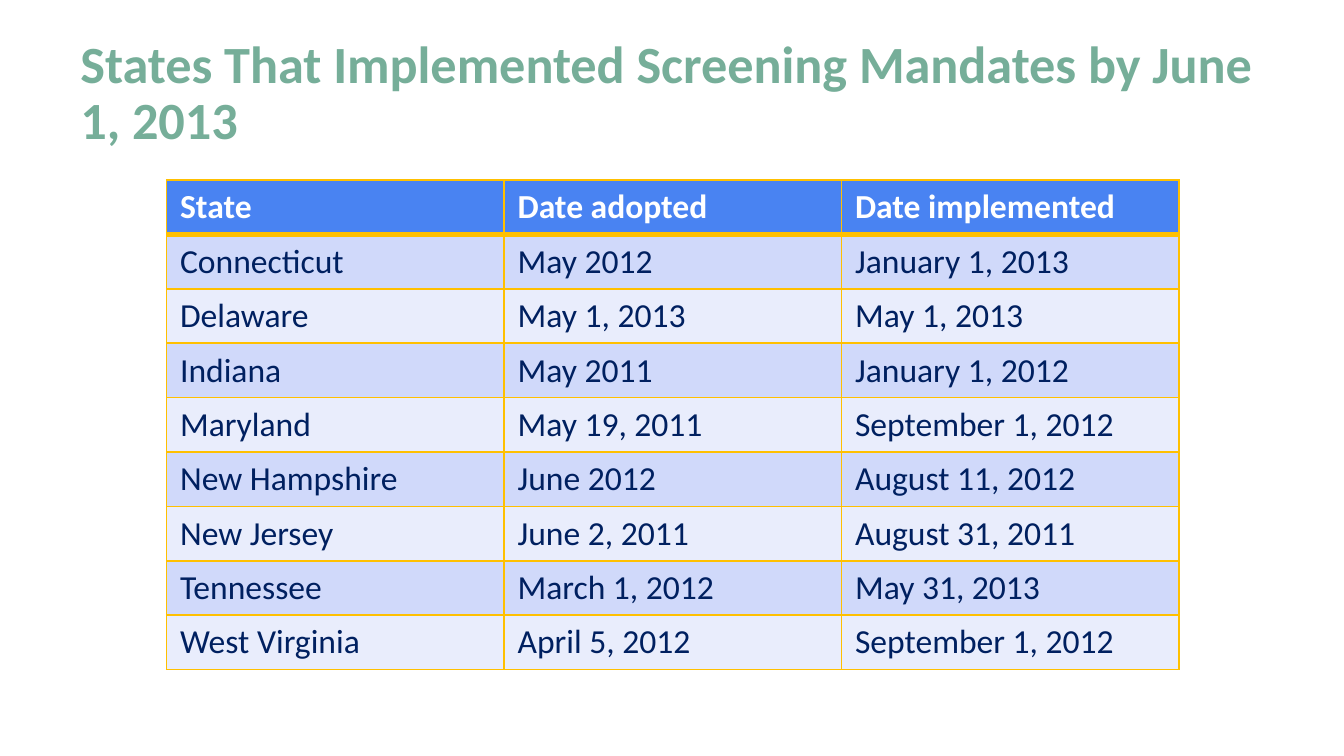
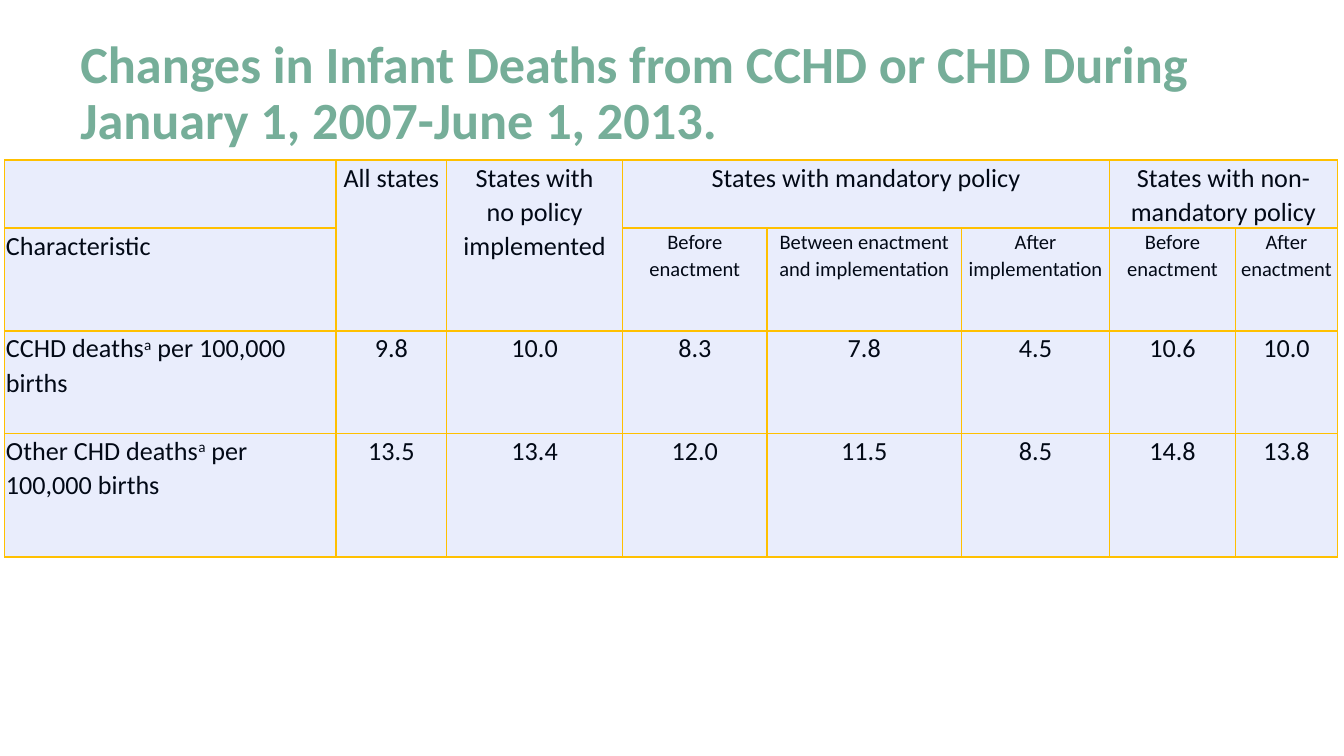
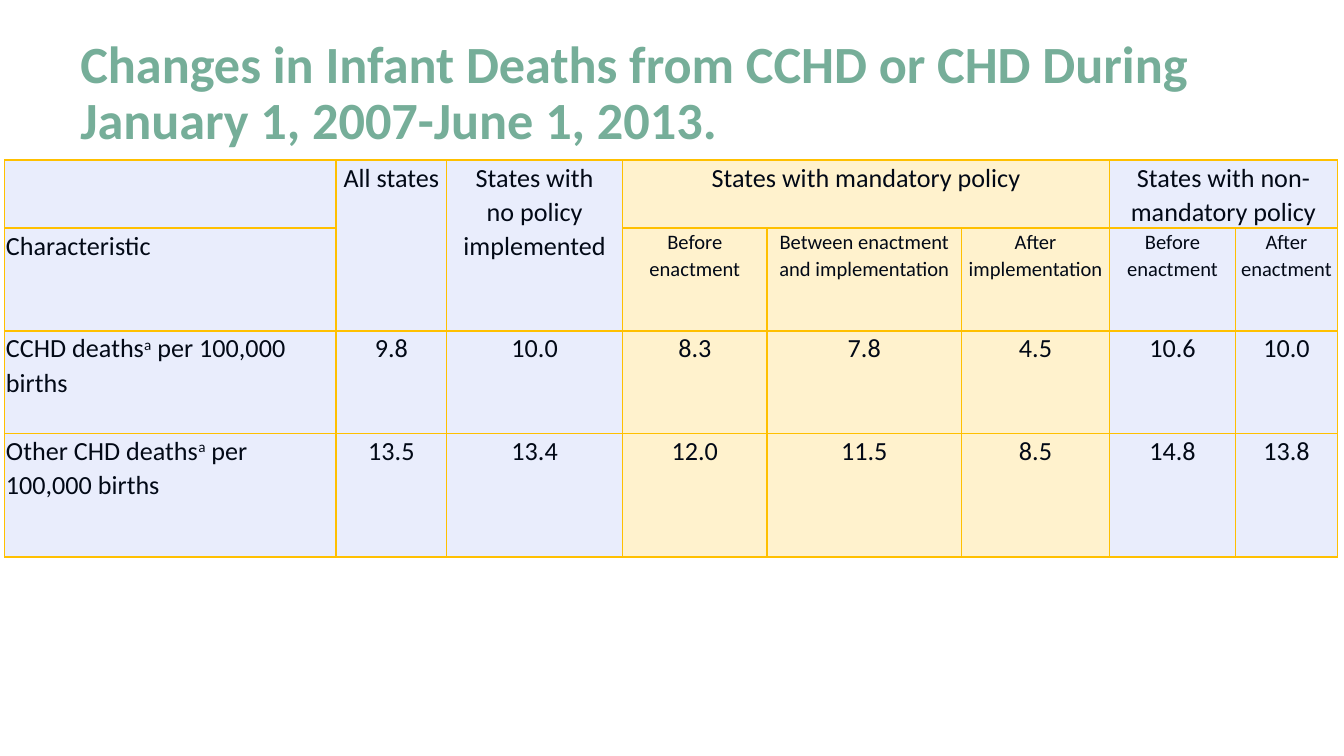
from lxml import etree
from pptx import Presentation
from pptx.dml.color import RGBColor
from pptx.enum.text import MSO_ANCHOR, PP_ALIGN
from pptx.oxml.ns import qn
from pptx.util import Pt

BOTTOM = MSO_ANCHOR.BOTTOM
LEFT, CENTER = PP_ALIGN.LEFT, PP_ALIGN.CENTER

GREEN = RGBColor(0x76, 0xAE, 0x99)
GOLD = RGBColor(0xFF, 0xC0, 0x00)
BLUE = RGBColor(0x49, 0x83, 0xF2)
MID = RGBColor(0xD0, 0xD9, 0xFA)
PALE = RGBColor(0xE9, 0xED, 0xFC)
CREAM = RGBColor(0xFF, 0xE6, 0x99)
NAVY = RGBColor(0x00, 0x20, 0x60)
INK = RGBColor(0x02, 0x09, 0x16)
WHITE = RGBColor(0xFF, 0xFF, 0xFF)

STATES = [
    ("State", "Date adopted", "Date implemented"),
    ("Connecticut", "May 2012", "January 1, 2013"),
    ("Delaware", "May 1, 2013", "May 1, 2013"),
    ("Indiana", "May 2011", "January 1, 2012"),
    ("Maryland", "May 19, 2011", "September 1, 2012"),
    ("New Hampshire", "June 2012", "August 11, 2012"),
    ("New Jersey", "June 2, 2011", "August 31, 2011"),
    ("Tennessee", "March 1, 2012", "May 31, 2013"),
    ("West Virginia", "April 5, 2012", "September 1, 2012"),
]

DEATHS = [
    ("", "All states", "States with\nno policy implemented",
     "States with mandatory policy", "", "",
     "States with non-mandatory policy", ""),
    ("Characteristic", "", "", "Before enactment",
     "Between enactment and implementation", "After implementation",
     "Before enactment", "After enactment"),
    ("CCHD deaths^a^ per 100,000 births",
     "9.8", "10.0", "8.3", "7.8", "4.5", "10.6", "10.0"),
    ("Other CHD deaths^a^ per 100,000 births",
     "13.5", "13.4", "12.0", "11.5", "8.5", "14.8", "13.8"),
]
SPANS = [((0, 1), (1, 1)), ((0, 2), (1, 2)), ((0, 3), (0, 5)), ((0, 6), (0, 7))]
WIDTHS = [177.6, 59.2, 94.3, 77.4, 104.2, 79.3, 67.5, 54.6]
HEIGHTS = [36.5, 55, 55, 66]
POLICY = range(3, 6)


class Deck:
    font = "Calibri"

    def __init__(self):
        self.prs = Presentation()
        self.prs.slide_width, self.prs.slide_height = Pt(720), Pt(405)

    def start(self, title):
        """Add a slide with its title."""
        self.slide = self.prs.slides.add_slide(self.prs.slide_layouts[6])
        box = self.slide.shapes.add_textbox(Pt(36), Pt(16.5), Pt(648), Pt(67.5))
        frame = box.text_frame
        frame.word_wrap = True
        frame.vertical_anchor = BOTTOM
        line = frame.paragraphs[0]
        self.put(line, title, 28, GREEN, True)
        line.line_spacing = Pt(30)

    def put(self, line, text, size, color, bold=False):
        """Fill a paragraph; text between carets is raised."""
        for i, part in enumerate(text.split("^")):
            run = line.add_run()
            run.text = part
            if i % 2:
                run._r.get_or_add_rPr().set("baseline", "30000")
        font = line.font
        font.name, font.size, font.bold = self.font, Pt(size), bold
        font.color.rgb = color

    def grid(self, left, top, widths, heights):
        table = self.slide.shapes.add_table(
            len(heights), len(widths), Pt(left), Pt(top),
            Pt(sum(widths)), Pt(sum(heights))).table
        for col, width in zip(table.columns, widths):
            col.width = Pt(width)
        for row, height in zip(table.rows, heights):
            row.height = Pt(height)
        table.horz_banding = False
        return table

    def paint(self, cell, color, alpha=None, **edges):
        """Set borders (1 pt unless given by side letter) and fill."""
        props = cell._tc.get_or_add_tcPr()
        for side in "LRTB":
            line = etree.SubElement(props, qn("a:ln" + side),
                                    w=str(Pt(edges.get(side, 1))))
            fill = etree.SubElement(line, qn("a:solidFill"))
            etree.SubElement(fill, qn("a:srgbClr"), val=str(GOLD))
        cell.fill.solid()
        cell.fill.fore_color.rgb = color
        if alpha:
            tint = props.find(qn("a:solidFill")).find(qn("a:srgbClr"))
            etree.SubElement(tint, qn("a:alpha"), val=str(alpha * 1000))

    def dates(self):
        table = self.grid(89.3, 96.5, [180.8] * 3, [29.15] * len(STATES))
        for r, row in enumerate(STATES):
            head = r == 0
            fill = BLUE if head else MID if r % 2 else PALE
            edges = {0: {"B": 3}, 1: {"T": 3}}.get(r, {})
            for c, text in enumerate(row):
                cell = table.cell(r, c)
                self.paint(cell, fill, **edges)
                self.put(cell.text_frame.paragraphs[0], text, 18,
                         WHITE if head else NAVY, head)

    def deaths(self, marked=()):
        """Add the death rates, with the marked columns tinted."""
        table = self.grid(2.5, 85.8, WIDTHS, HEIGHTS)
        table.first_row = False
        for r, row in enumerate(DEATHS):
            for c, text in enumerate(row):
                cell = table.cell(r, c)
                if c in marked:
                    self.paint(cell, CREAM, 49)
                else:
                    self.paint(cell, PALE)
                if text:
                    self.label(cell, text, 11 if r == 1 and c else 14,
                               CENTER if c else LEFT)
        for first, last in SPANS:
            table.cell(*first).merge(table.cell(*last))

    def label(self, cell, text, size, align):
        cell.margin_left = cell.margin_right = Pt(0.72)
        cell.margin_top = cell.margin_bottom = 0
        frame = cell.text_frame
        for i, part in enumerate(text.split("\n")):
            line = frame.add_paragraph() if i else frame.paragraphs[0]
            self.put(line, part, size, INK)
            line.alignment = align
            line.line_spacing = 1.07


def main():
    deck = Deck()
    deck.start("States That Implemented Screening Mandates by June 1, 2013")
    deck.dates()
    for marked in ((), POLICY):
        deck.start("Changes in Infant Deaths from CCHD or CHD During "
                   "January 1, 2007-June 1, 2013.")
        deck.deaths(marked)
    deck.prs.save("out.pptx")


if __name__ == "__main__":
    main()
